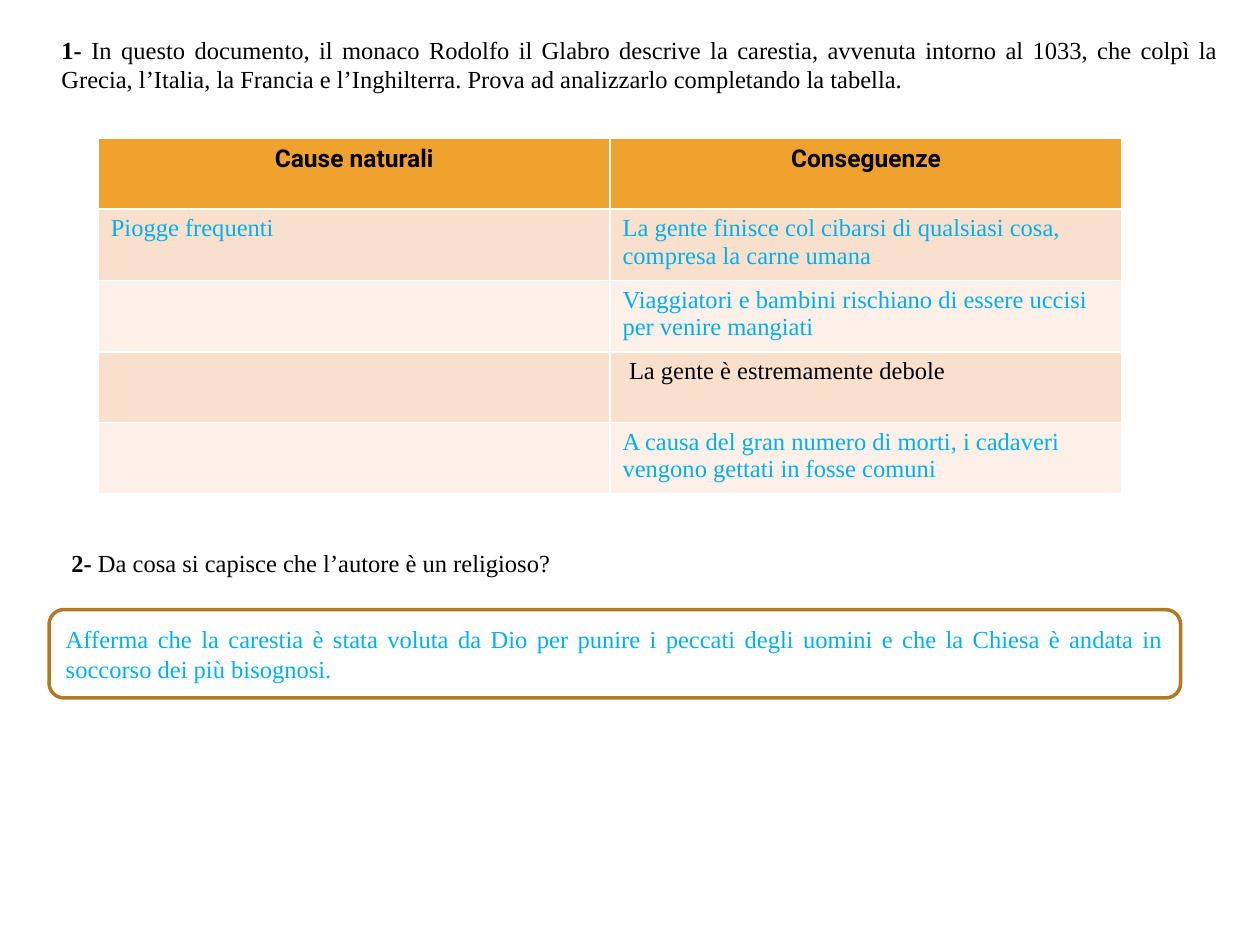
"""Builds a reading worksheet slide with a table and two questions."""
from dataclasses import dataclass

from pptx import Presentation
from pptx.dml.color import RGBColor as Rgb
from pptx.enum.shapes import MSO_SHAPE as Form
from pptx.enum.text import MSO_ANCHOR as Anchor, PP_ALIGN as Align
from pptx.util import Cm, Pt

HUES = {
    "ink": "000000", "answer": "00B0F0", "head": "F0A22E", "dark": "F9E0CD",
    "light": "FCF0E8", "edge": "B27822", "paper": "FFFFFF",
}
SERIF, SANS = "Times New Roman", "Roboto"


@dataclass
class Task:
    mark: str
    text: str
    left: float
    top: float
    high: float


@dataclass
class Row:
    cause: str
    effect: str
    hue: str = "answer"
    inset: float = 0.25


TASKS = [
    Task("1- ", "In questo documento, il monaco Rodolfo il Glabro descrive la "
         "carestia, avvenuta intorno al 1033, che colpì la Grecia, l’Italia, "
         "la Francia e l’Inghilterra. Prova ad analizzarlo completando la "
         "tabella.", 0.99, 0.58, 1.45),
    Task("2- ", "Da cosa si capisce che l’autore è un religioso?",
         1.19, 10.92, 0.86),
]
ROWS = [
    Row("Piogge frequenti", "La gente finisce col cibarsi di qualsiasi cosa, "
        "compresa la carne umana"),
    Row("", "Viaggiatori e bambini rischiano di essere uccisi per venire "
        "mangiati"),
    Row("", "La gente è estremamente debole", "ink", 0.38),
    Row("", "A causa del gran numero di morti, i cadaveri vengono gettati in "
        "fosse comuni"),
]
REPLY = ("Afferma che la carestia è stata voluta da Dio per punire i peccati "
         "degli uomini e che la Chiesa è andata in soccorso dei più bisognosi.")


def tint(name: str) -> Rgb:
    """Return the named colour."""
    return Rgb.from_string(HUES[name])


def style(para, hue: str, face: str = SERIF, align=Align.JUSTIFY) -> None:
    """Set the font and alignment of a paragraph."""
    para.alignment = align
    para.font.size, para.font.name = Pt(14), face
    para.font.color.rgb = tint(hue)


def add_task(slide, task: Task) -> None:
    """Add a question with its bold number."""
    box = slide.shapes.add_textbox(
        Cm(task.left), Cm(task.top), Cm(23.83), Cm(task.high))
    box.text_frame.word_wrap = True
    para = box.text_frame.paragraphs[0]
    mark = para.add_run()
    mark.text, mark.font.bold = task.mark, True
    para.add_run().text = task.text
    style(para, "ink")


def fill_cell(cell, text: str, fill: str, hue: str, face: str = SERIF,
              align=Align.LEFT, bold: bool = False) -> None:
    """Write and colour one table cell."""
    cell.text = text
    cell.fill.solid()
    cell.fill.fore_color.rgb = tint(fill)
    para = cell.text_frame.paragraphs[0]
    style(para, hue, face, align)
    para.font.bold = bold


def add_grid(slide) -> None:
    """Add the table of causes and effects."""
    count = len(ROWS) + 1
    grid = slide.shapes.add_table(
        count, 2, Cm(1.98), Cm(2.78), Cm(20.64), Cm(1.43 * count)).table
    for col, text in enumerate(("Cause naturali", "Conseguenze")):
        fill_cell(grid.cell(0, col), text, "head", "ink", SANS,
                  Align.CENTER, True)
    for num, row in enumerate(ROWS, 1):
        fill = "dark" if num % 2 else "light"
        for col, text in enumerate((row.cause, row.effect)):
            fill_cell(grid.cell(num, col), text, fill, row.hue)
        grid.cell(num, 1).margin_left = Cm(row.inset)


def add_reply(slide) -> None:
    """Add the rounded answer box."""
    box = slide.shapes.add_shape(
        Form.ROUNDED_RECTANGLE, Cm(0.99), Cm(12.29), Cm(22.81), Cm(1.78))
    box.shadow.inherit = False
    box.fill.solid()
    box.fill.fore_color.rgb = tint("paper")
    box.line.color.rgb, box.line.width = tint("edge"), Pt(2)
    frame = box.text_frame
    frame.word_wrap, frame.vertical_anchor = True, Anchor.MIDDLE
    frame.text = REPLY
    style(frame.paragraphs[0], "answer")


def main() -> None:
    """Build and save the slide."""
    deck = Presentation()
    deck.slide_width, deck.slide_height = Cm(25.4), Cm(19.05)
    slide = deck.slides.add_slide(deck.slide_layouts[6])
    for task in TASKS:
        add_task(slide, task)
    add_reply(slide)
    add_grid(slide)
    deck.save("out.pptx")


if __name__ == "__main__":
    main()
